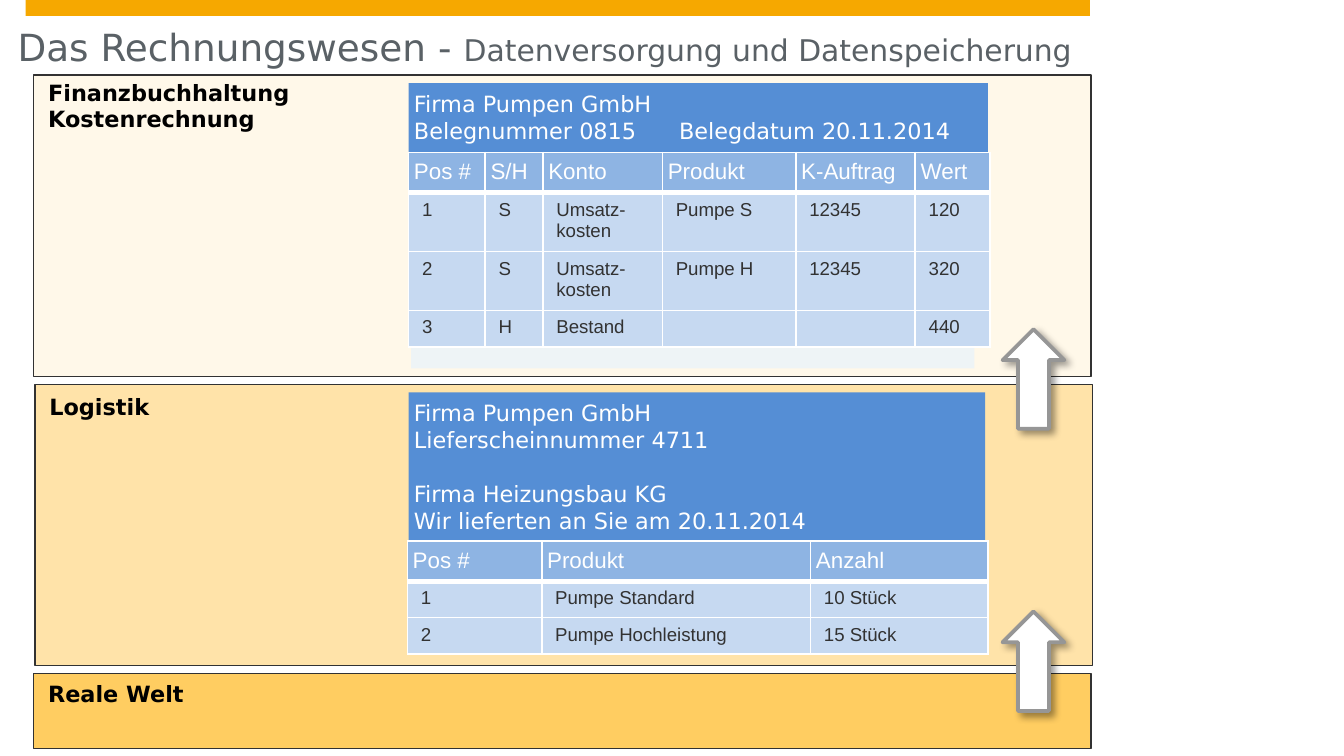
from lxml.etree import SubElement
from pptx import Presentation
from pptx.dml.color import RGBColor
from pptx.enum.shapes import MSO_SHAPE as Preset
from pptx.enum.text import MSO_ANCHOR as Anchor
from pptx.oxml import parse_xml
from pptx.oxml.ns import nsdecls, qn
from pptx.util import Pt


def color(value):
    return RGBColor.from_string(value)


def add_shape(preset, left, top, width, height, fill, line=None, line_width=0.75):
    shape = slide.shapes.add_shape(preset, Pt(left), Pt(top), Pt(width), Pt(height))
    shape.shadow.inherit = False
    shape.fill.solid()
    shape.fill.fore_color.rgb = color(fill)
    if line:
        shape.line.color.rgb = color(line)
        shape.line.width = Pt(line_width)
    else:
        shape.line.fill.background()
    return shape


presentation = Presentation()
presentation.slide_width = Pt(720)
presentation.slide_height = Pt(405)
slide = presentation.slides.add_slide(presentation.slide_layouts[6])

add_shape(Preset.RECTANGLE, 13.7, 0, 570.2, 8.6, "F6A800")

title = slide.shapes.add_textbox(Pt(9.4), Pt(4.3), Pt(578), Pt(46.8)).text_frame
title.word_wrap = True
title.vertical_anchor = Anchor.BOTTOM
title.margin_left = title.margin_right = title.margin_top = 0
title.margin_bottom = Pt(14.4)
paragraph = title.paragraphs[0]
paragraph.font.name = "DejaVu Sans"
paragraph.font.color.rgb = color("5A6166")
for text, size in [
    ("Das Rechnungswesen - ", 20),
    ("Datenversorgung und Datenspeicherung", 16),
]:
    run = paragraph.add_run()
    run.text = text
    run.font.size = Pt(size)

panels = [
    ("Finanzbuchhaltung\nKostenrechnung", 18, 40.3, 161.3, "FFDE95", 20, 38.6),
    ("Logistik", 18.7, 205.9, 150.5, "FFCD61", 54, 206.9),
    ("Reale Welt", 18, 360.7, 40.3, "FFCD61", 100, 361),
]
for text, left, top, height, fill, opacity, label_top in panels:
    panel = add_shape(Preset.RECTANGLE, left, top, 566.6, height, fill, "323232")
    if opacity < 100:
        fill_color = panel.fill._xPr.find(qn("a:solidFill"))[0]
        SubElement(fill_color, qn("a:alpha"), val=str(opacity * 1000))
    label = slide.shapes.add_textbox(Pt(left + 0.7), Pt(label_top), Pt(163), Pt(22)).text_frame
    label.word_wrap = True
    label.text = text
    for paragraph in label.paragraphs:
        paragraph.font.name = "DejaVu Sans"
        paragraph.font.size = Pt(12)
        paragraph.font.bold = True
        paragraph.font.color.rgb = color("000000")

document_edge = add_shape(Preset.FLOWCHART_DOCUMENT, 220.3, 177.1, 301.7, 20.2, "EEF4F6")
document_edge.rotation = 180

documents = [
    (44.6, 310.3, 37.4, ["Firma Pumpen GmbH", "Belegnummer 0815\tBelegdatum 20.11.2014"]),
    (210.2, 308.9, 81.4, [
        "Firma Pumpen GmbH",
        "Lieferscheinnummer 4711",
        "Firma Heizungsbau KG",
        "Wir lieferten an Sie am 20.11.2014",
    ]),
]
for top, width, height, lines in documents:
    frame = add_shape(Preset.RECTANGLE, 218.9, top, width, height, "558ED5").text_frame
    frame.word_wrap = True
    frame.vertical_anchor = Anchor.TOP
    frame.margin_left = frame.margin_right = Pt(2.9)
    frame.margin_top = frame.margin_bottom = Pt(3.6)
    frame.text = "\n".join(lines)
    for paragraph, line in zip(frame.paragraphs, lines):
        paragraph.alignment = 1
        paragraph.font.name = "DejaVu Sans"
        paragraph.font.size = Pt(12)
        paragraph.font.color.rgb = color("FFFFFF")
        if "\t" in line:
            tabs = SubElement(paragraph._p.get_or_add_pPr(), qn("a:tabLst"))
            paragraph._p.pPr.insert(0, tabs)
            SubElement(tabs, qn("a:tab"), pos=str(Pt(142)), algn="l")
        if line == "Firma Heizungsbau KG":
            paragraph.space_before = Pt(14.5)

tables = [
    (218.9, 81.7, [41, 31, 64, 71.5, 64, 40], [21, 31.5, 31.5, 19.5], [
        ["Pos #", "S/H", "Konto", "Produkt", "K-Auftrag", "Wert"],
        ["1", "S", "Umsatz-kosten", "Pumpe S", "12345", "120"],
        ["2", "S", "Umsatz-kosten", "Pumpe H", "12345", "320"],
        ["3", "H", "Bestand", "", "", "440"],
    ]),
    (218.2, 289.8, [72, 144, 95], [21, 19.5, 19.5], [
        ["Pos #", "Produkt", "Anzahl"],
        ["1", "Pumpe Standard", "10 Stück"],
        ["2", "Pumpe Hochleistung", "15 Stück"],
    ]),
]
for left, top, widths, heights, rows in tables:
    table = slide.shapes.add_table(
        len(rows), len(widths), Pt(left), Pt(top), Pt(sum(widths)), Pt(sum(heights))
    ).table
    for column, width in zip(table.columns, widths):
        column.width = Pt(width)
    for row_index, (values, height) in enumerate(zip(rows, heights)):
        table.rows[row_index].height = Pt(height)
        is_header = row_index == 0
        for column_index, text in enumerate(values):
            cell = table.cell(row_index, column_index)
            cell.text = text
            cell.margin_left = cell.margin_right = Pt(2.9 if is_header else 7.2)
            cell.margin_top = cell.margin_bottom = Pt(3.6)
            font = cell.text_frame.paragraphs[0].font
            font.name = "Arial"
            font.size = Pt(12 if is_header else 10)
            font.bold = False
            font.color.rgb = color("FFFFFF" if is_header else "323232")
            borders = {"lnL": 1, "lnR": 1, "lnT": 3 if row_index == 1 else 1, "lnB": 3 if is_header else 1}
            for side, border_width in borders.items():
                border = SubElement(cell._tc.get_or_add_tcPr(), qn(f"a:{side}"), w=str(Pt(border_width)))
                SubElement(SubElement(border, qn("a:solidFill")), qn("a:srgbClr"), val="FFFFFF")
            cell.fill.solid()
            cell.fill.fore_color.rgb = color("8EB4E3" if is_header else "C6D9F1")

for top in (176.4, 327.6):
    arrow = add_shape(Preset.UP_ARROW, 537.1, top, 33.1, 53.3, "FFFFFF", "969696", 2)
    effects = arrow._element.spPr.find(qn("a:effectLst"))
    effects.append(parse_xml(
        f'<a:outerShdw {nsdecls("a")} blurRad="{Pt(4)}" dist="{Pt(3)}" dir="2700000" algn="tl" rotWithShape="0">'
        '<a:srgbClr val="000000"><a:alpha val="40000"/></a:srgbClr></a:outerShdw>'
    ))

presentation.save("out.pptx")
